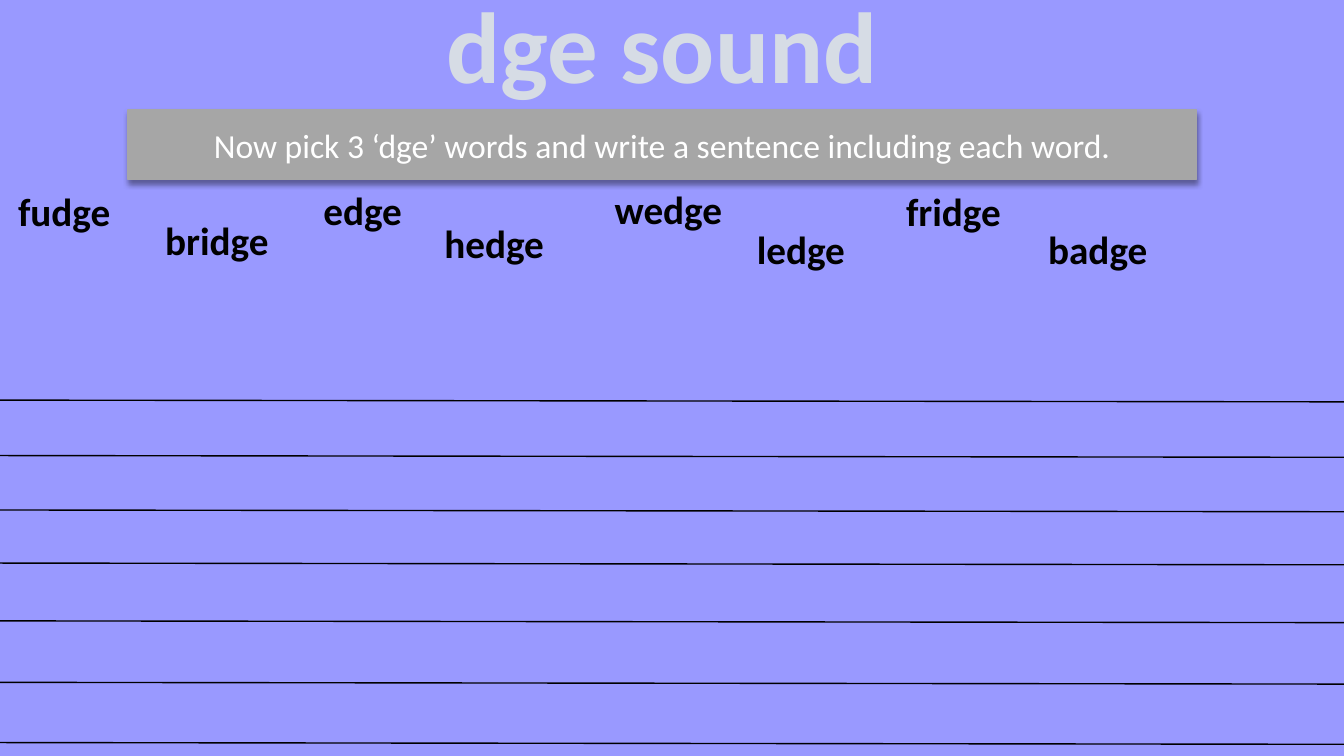
from lxml import etree
from pptx import Presentation
from pptx.dml.color import RGBColor
from pptx.enum.dml import MSO_PATTERN
from pptx.enum.shapes import MSO_CONNECTOR, MSO_SHAPE
from pptx.enum.text import MSO_ANCHOR, MSO_AUTO_SIZE, PP_ALIGN
from pptx.oxml import parse_xml
from pptx.oxml.ns import nsdecls, qn
from pptx.util import Pt

STRIPES = MSO_PATTERN.DARK_UPWARD_DIAGONAL
STRAIGHT = MSO_CONNECTOR.STRAIGHT
RECTANGLE = MSO_SHAPE.RECTANGLE
MIDDLE = MSO_ANCHOR.MIDDLE
CENTER = PP_ALIGN.CENTER
GROW = MSO_AUTO_SIZE.SHAPE_TO_FIT_TEXT

COLORS = {
    "background": "9999FF",
    "title_stripe": "44546A",
    "title_base": "D6DCE5",
    "title_outline": "333F50",
    "banner": "A6A6A6",
    "banner_text": "FFFFFF",
    "ink": "000000",
}
SLIDE_WIDTH, SLIDE_HEIGHT = 960, 540
LINE_DROP = 1.25
WORD_HEIGHT = 41


def color(name):
    return RGBColor.from_string(COLORS[name])


def add_label(left, top, width, height, text, size):
    label = slide.shapes.add_textbox(Pt(left), Pt(top), Pt(width), Pt(height))
    label.text_frame.word_wrap = False
    label.text_frame.auto_size = GROW
    paragraph = label.text_frame.paragraphs[0]
    paragraph.text = text
    font = paragraph.runs[0].font
    font.name, font.size, font.bold = "Calibri", Pt(size), True
    return paragraph


presentation = Presentation()
presentation.slide_width = Pt(SLIDE_WIDTH)
presentation.slide_height = Pt(SLIDE_HEIGHT)
slide = presentation.slides.add_slide(presentation.slide_layouts[6])
slide.background.fill.solid()
slide.background.fill.fore_color.rgb = color("background")

title = add_label(310.3, -15.8, 325.4, 94.3, "dge sound", 72)
title.alignment = CENTER
title_font = title.runs[0].font
title_font.fill.patterned()
title_font.fill.pattern = STRIPES
title_font.fill.fore_color.rgb = color("title_stripe")
title_font.fill.back_color.rgb = color("title_base")
outline = parse_xml(
    f'<a:ln {nsdecls("a")} w="{Pt(1)}"><a:solidFill>'
    f'<a:srgbClr val="{COLORS["title_outline"]}"/></a:solidFill></a:ln>'
)
title.runs[0].font.fill._xPr.insert(0, outline)

banner = slide.shapes.add_shape(RECTANGLE, Pt(91.4), Pt(78.5), Pt(763.2), Pt(49.7))
banner.fill.solid()
banner.fill.fore_color.rgb = color("banner")
banner.line.color.rgb = color("banner")
banner.line.width = Pt(1)
banner.shadow.inherit = False
shadow = parse_xml(
    f'<a:outerShdw {nsdecls("a")} blurRad="{Pt(4)}" dist="{Pt(3)}" dir="5400000" rotWithShape="0">'
    f'<a:srgbClr val="{COLORS["ink"]}"><a:alpha val="40000"/></a:srgbClr></a:outerShdw>'
)
banner._element.spPr.find(qn("a:effectLst")).append(shadow)
banner.text_frame.vertical_anchor = MIDDLE
instruction = banner.text_frame.paragraphs[0]
instruction.text = "Now pick 3 ‘dge’ words and write a sentence including each word."
instruction.alignment = CENTER
instruction_font = instruction.runs[0].font
instruction_font.name, instruction_font.size = "Calibri", Pt(24)
instruction_font.color.rgb = color("banner_text")

for top in (285.8, 325.4, 364.3, 402.2, 443.5, 487.4, 530.4):
    writing_line = slide.shapes.add_connector(
        STRAIGHT, Pt(0), Pt(top), Pt(SLIDE_WIDTH), Pt(top + LINE_DROP)
    )
    writing_line.line.color.rgb = color("ink")
    writing_line.line.width = Pt(1)
    etree.SubElement(writing_line._element.spPr, qn("a:effectLst"))

WORDS = [
    ("fudge", 5.8, 130.3, 85),
    ("bridge", 110.9, 151.2, 93.6),
    ("edge", 223.9, 129.6, 75.6),
    ("hedge", 310.3, 153.4, 90.7),
    ("wedge", 432, 128.9, 96.5),
    ("ledge", 533.5, 157.7, 82.1),
    ("fridge", 640.1, 130.3, 87.1),
    ("badge", 741.6, 157.7, 90),
]
for word, left, top, width in WORDS:
    entry = add_label(left, top, width, WORD_HEIGHT, word, 28)
    entry.runs[0].font.color.rgb = color("ink")
    space = entry.add_run()
    space.text = " "
    space.font.name, space.font.size = "Calibri", Pt(18)

presentation.save("out.pptx")
